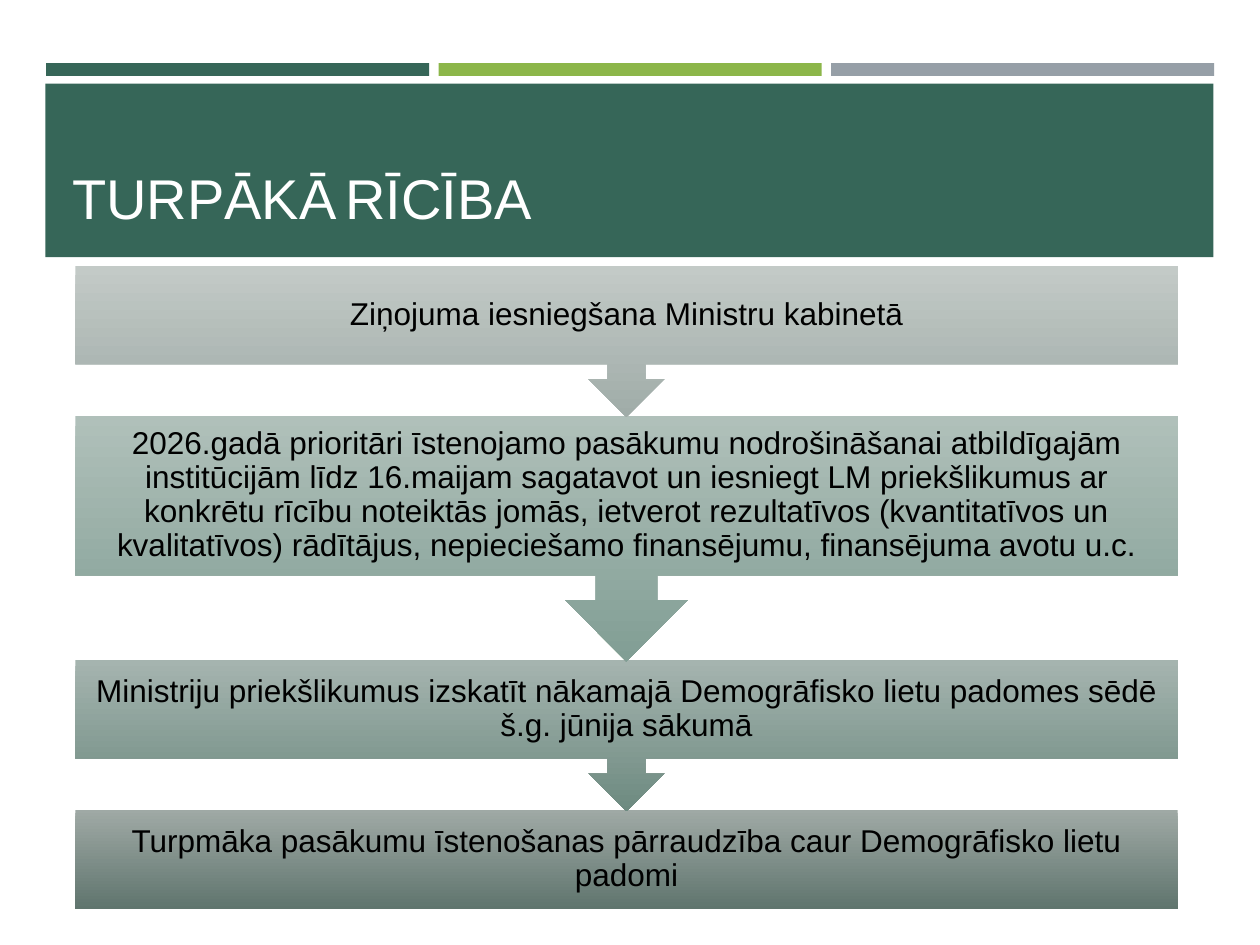
import pptx
import pptx.util
import pptx.dml.color
import pptx.enum.shapes
import pptx.enum.text

Pt = pptx.util.Pt
RGB = pptx.dml.color.RGBColor
SHAPES = pptx.enum.shapes.MSO_SHAPE
ALIGN = pptx.enum.text.PP_ALIGN
ANCHOR = pptx.enum.text.MSO_ANCHOR

GREEN = RGB(0x36, 0x66, 0x58)
LIME = RGB(0x8C, 0xB6, 0x4A)
GREY = RGB(0x96, 0x9F, 0xA7)
WHITE = RGB(0xFF, 0xFF, 0xFF)
BLACK = RGB(0x00, 0x00, 0x00)

STEPS = [
    ("Ziņojuma iesniegšana Ministru kabinetā",
     86.4, RGB(0xC3, 0xCA, 0xC7), RGB(0xA0, 0xAC, 0xA8)),
    ("2026.gadā prioritāri īstenojamo pasākumu nodrošināšanai atbildīgajām "
     "institūcijām līdz 16.maijam sagatavot un iesniegt LM priekšlikumus ar "
     "konkrētu rīcību noteiktās jomās, ietverot rezultatīvos (kvantitatīvos un "
     "kvalitatīvos) rādītājus, nepieciešamo finansējumu, finansējuma avotu u.c.",
     140.4, RGB(0xB0, 0xC0, 0xBA), RGB(0x81, 0x9E, 0x94)),
    ("Ministriju priekšlikumus izskatīt nākamajā Demogrāfisko lietu padomes sēdē "
     "š.g. jūnija sākumā",
     86.4, RGB(0xA5, 0xB4, 0xAF), RGB(0x6D, 0x8A, 0x80)),
    ("Turpmāka pasākumu īstenošanas pārraudzība caur Demogrāfisko lietu padomi",
     56.2, RGB(0x9F, 0xA9, 0xA5), RGB(0x60, 0x75, 0x6E)),
]
FIRST_STEP_TOP = 151.9
STEP_OVERLAP = 0.7


def add_text(paragraph, text, size=18, color=BLACK, font="Arial"):
    run = paragraph.add_run()
    run.text = text
    run.font.size = Pt(size)
    run.font.name = font
    run.font.color.rgb = color


def add_block(kind, left, top, width, height):
    block = slide.shapes.add_shape(kind, Pt(left), Pt(top), Pt(width), Pt(height))
    block.shadow.inherit = False
    block.line.fill.background()
    return block


deck = pptx.Presentation()
deck.slide_width, deck.slide_height = Pt(720), Pt(540)
slide = deck.slides.add_slide(deck.slide_layouts[5])

for column, color in enumerate([GREEN, LIME, GREY]):
    stripe = add_block(SHAPES.RECTANGLE, 26.4 + column * 224.3, 36, 218.9, 7.4)
    stripe.fill.solid()
    stripe.fill.fore_color.rgb = color

banner = add_block(SHAPES.RECTANGLE, 26, 47.8, 667.4, 99.2)
banner.fill.solid()
banner.fill.fore_color.rgb = GREEN

tops = [FIRST_STEP_TOP]
for wording, height, light, dark in STEPS[:-1]:
    tops.append(tops[-1] + height - STEP_OVERLAP)

for top, (wording, height, light, dark) in reversed(list(zip(tops, STEPS))):
    kind = SHAPES.RECTANGLE if top == tops[-1] else SHAPES.DOWN_ARROW_CALLOUT
    step = add_block(kind, 43, top, 630, height)
    step.fill.gradient()
    step.fill.gradient_angle = 270
    for stop, color in zip(step.fill.gradient_stops, (light, dark)):
        stop.color.rgb = color
    frame = step.text_frame
    frame.word_wrap = True
    frame.vertical_anchor = ANCHOR.MIDDLE
    frame.margin_left = frame.margin_right = Pt(10)
    frame.margin_top = frame.margin_bottom = Pt(10)
    paragraph = frame.paragraphs[0]
    paragraph.alignment = ALIGN.CENTER
    paragraph.line_spacing = 0.9
    add_text(paragraph, wording)

title = slide.shapes.title
title.left, title.top, title.width, title.height = Pt(34), Pt(57.6), Pt(651.6), Pt(77.8)
title.text_frame.auto_size = pptx.enum.text.MSO_AUTO_SIZE.NONE
title.text_frame.vertical_anchor = ANCHOR.BOTTOM
heading = title.text_frame.paragraphs[0]
heading.alignment = ALIGN.LEFT
add_text(heading, "TURPĀKĀ", size=32, color=WHITE)
add_text(heading, " ", size=21, color=WHITE, font="Calibri")
add_text(heading, "RĪCĪBA", size=32, color=WHITE)
slide.shapes._spTree.append(title._element)

deck.save("out.pptx")
